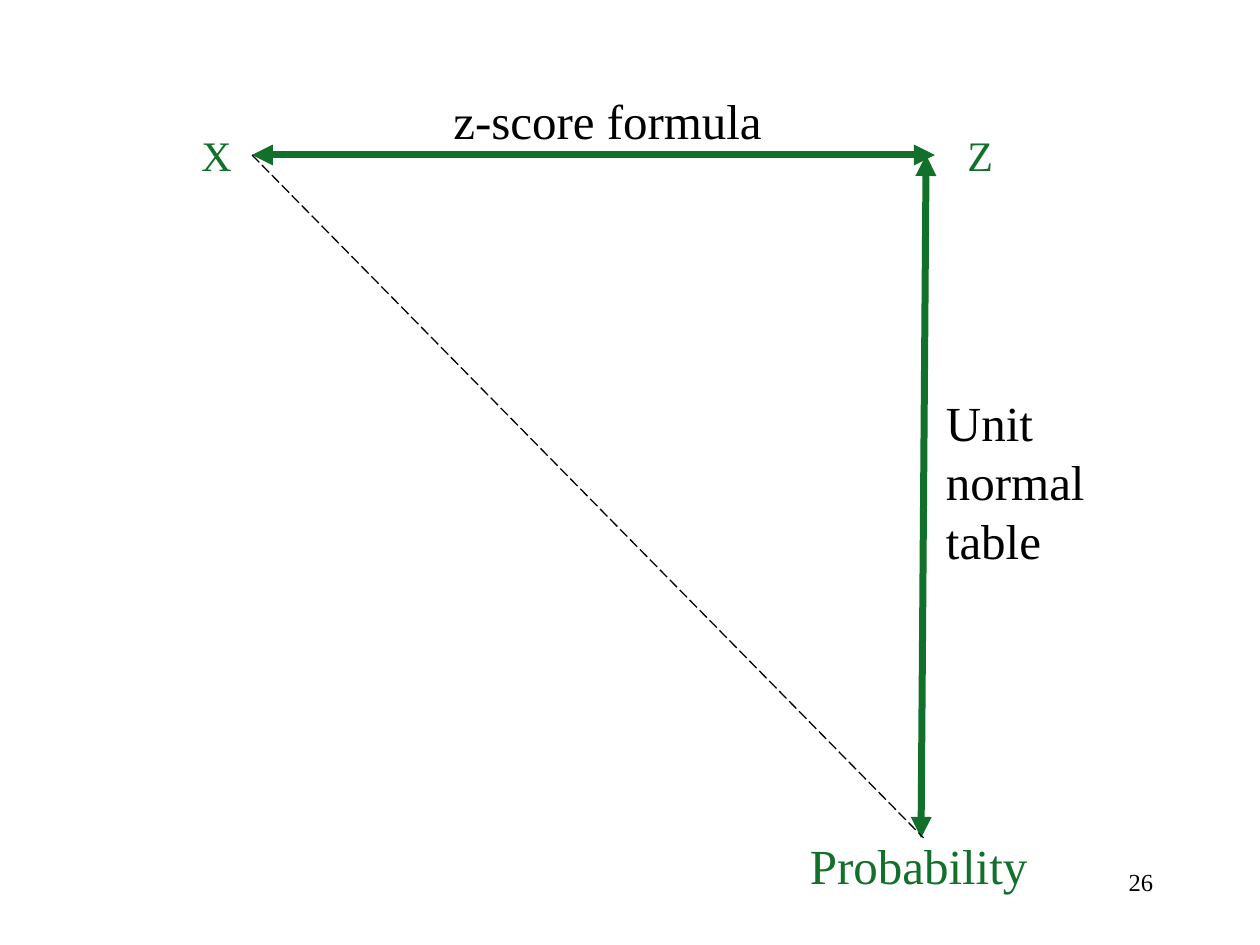
from lxml import etree
from pptx import Presentation
from pptx.dml.color import RGBColor
from pptx.enum import dml, shapes, text
from pptx.oxml.ns import qn
from pptx.util import Inches, Pt

GREEN = RGBColor(0x11, 0x70, 0x29)
BLACK = RGBColor(0, 0, 0)
FONT = "Times New Roman"
WIDTH, HEIGHT = 10, 7.5

# Corners of the triangle
X_CORNER = (2, 1.23)
PROBABILITY_CORNER = (7.33, 6.65)

# Lines: start, end, colour, width, double-headed arrow
LINES = [
    (X_CORNER, (7.42, 1.23), GREEN, 4, True),
    ((7.31, 6.65), (7.35, 1.23), GREEN, 4, True),
    (X_CORNER, PROBABILITY_CORNER, BLACK, 0.75, False),
]

# Labels: lines of text, box (left, top, width, height), size, colour
LABELS = [
    (["X"], (1.5, 0.98, 0.44, 0.5), 24, GREEN),
    (["Z"], (7.58, 0.98, 0.4, 0.5), 24, GREEN),
    (["Probability"], (6.33, 6.58, 1.93, 0.57), 28, GREEN),
    (["z-score formula"], (3.5, 0.67, 2.65, 0.57), 28, BLACK),
    (["Unit", "normal", "table"], (7.41, 3.07, 1.4, 1.5), 28, BLACK),
]
PAGE_NUMBER = (["26"], (7.17, 6.83, 2.08, 0.5), 14, BLACK)


def add_line(slide, start, end, color, width, arrow):
    connector = slide.shapes.add_connector(
        shapes.MSO_CONNECTOR.STRAIGHT, *map(Inches, start + end))
    connector.line.color.rgb = color
    connector.line.width = Pt(width)
    if arrow:
        for tag in ("a:headEnd", "a:tailEnd"):
            etree.SubElement(connector.line._get_or_add_ln(), qn(tag), type="triangle")
    else:
        connector.line.dash_style = dml.MSO_LINE.LONG_DASH
    etree.SubElement(connector._element.spPr, qn("a:effectLst"))


def add_label(slide, lines, box, size, color):
    text_frame = slide.shapes.add_textbox(*map(Inches, box)).text_frame
    text_frame.word_wrap = False
    text_frame.auto_size = text.MSO_AUTO_SIZE.SHAPE_TO_FIT_TEXT
    text_frame.text = "\n".join(lines)
    for paragraph in text_frame.paragraphs:
        for run in paragraph.runs:
            run.font.name = FONT
            run.font.size = Pt(size)
            run.font.color.rgb = color
    return text_frame


def main():
    presentation = Presentation()
    presentation.slide_width = Inches(WIDTH)
    presentation.slide_height = Inches(HEIGHT)
    slide = presentation.slides.add_slide(presentation.slide_layouts[6])

    for line in LINES:
        add_line(slide, *line)
    for label in LABELS:
        add_label(slide, *label)

    # Page number, right-aligned in a fixed box
    page_number = add_label(slide, *PAGE_NUMBER)
    page_number.word_wrap = True
    page_number.auto_size = text.MSO_AUTO_SIZE.NONE
    page_number.paragraphs[0].alignment = text.PP_ALIGN.RIGHT

    presentation.save("out.pptx")


if __name__ == "__main__":
    main()
